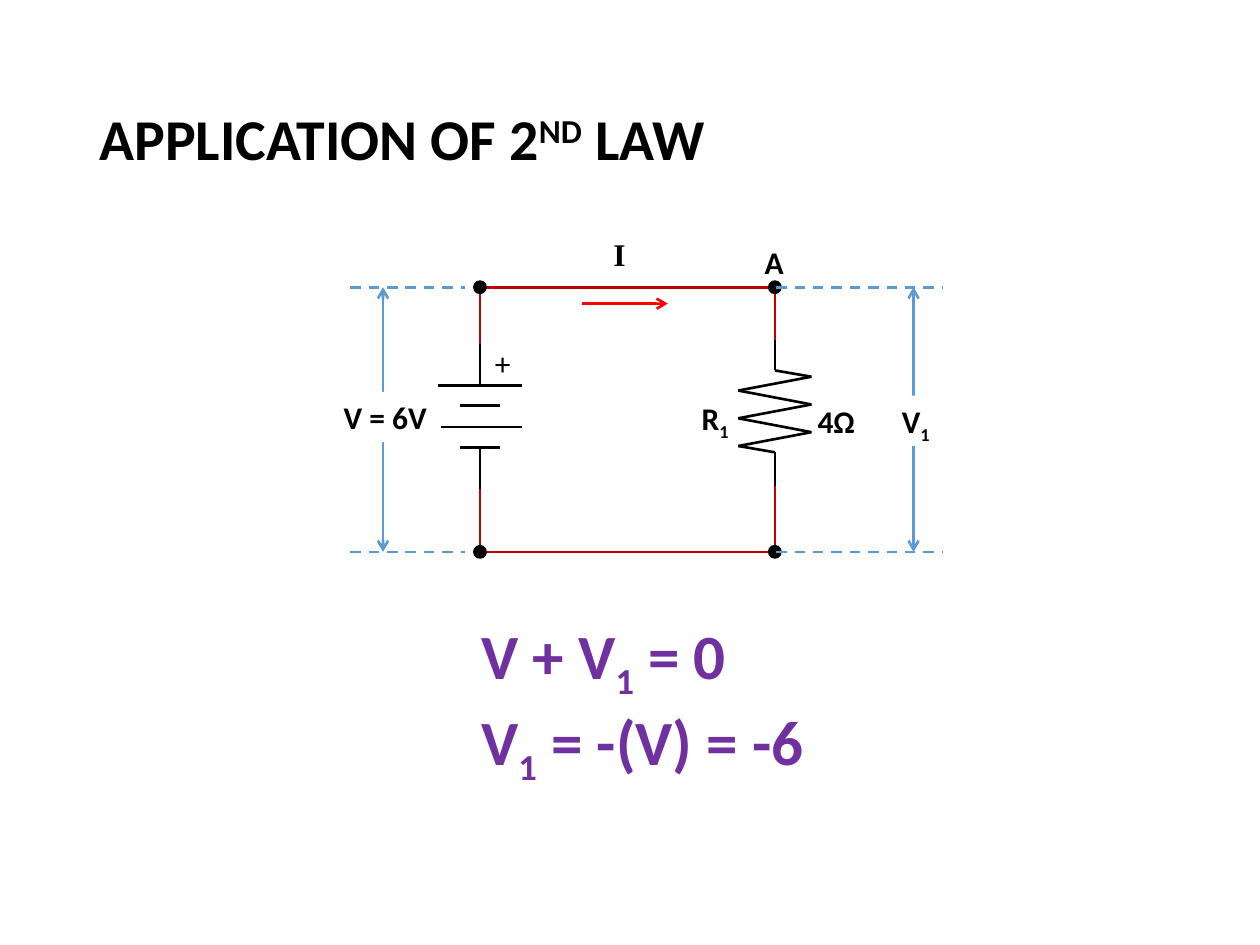
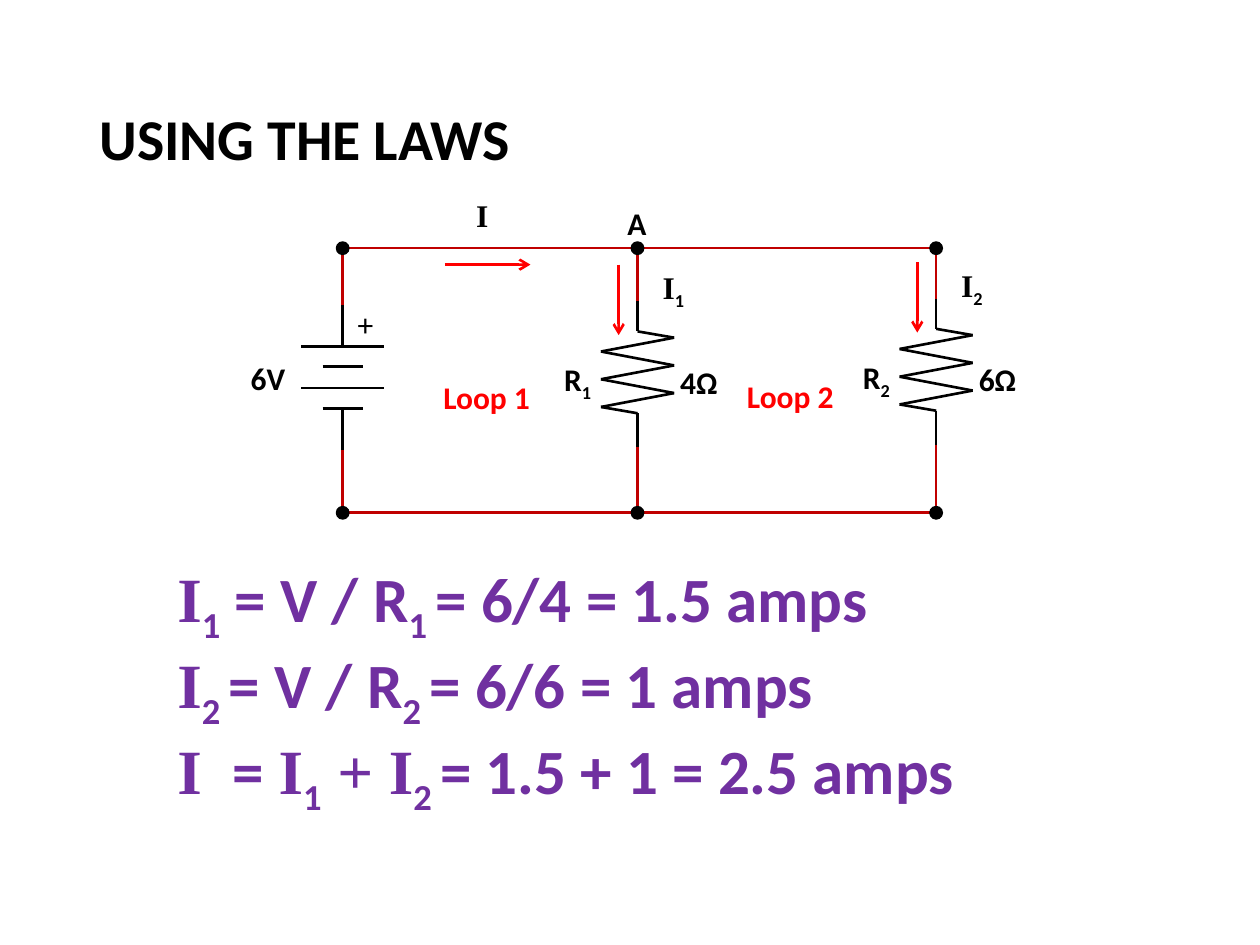
from itertools import pairwise
from lxml.etree import SubElement
from pptx import Presentation
from pptx.dml.color import RGBColor
from pptx.enum.dml import MSO_LINE
from pptx.enum.shapes import MSO_CONNECTOR, MSO_SHAPE
from pptx.enum.text import MSO_ANCHOR, MSO_AUTO_SIZE, PP_ALIGN
from pptx.oxml.ns import qn
from pptx.util import Inches, Pt


class Theme:
    black = RGBColor.from_string("000000")
    white = RGBColor.from_string("FFFFFF")
    wire = RGBColor.from_string("C00000")
    red = RGBColor.from_string("FF0000")
    blue = RGBColor.from_string("5B9BD5")
    purple = RGBColor.from_string("7030A0")
    sans = "Calibri"
    serif = "Times New Roman"
    title = Pt(33)
    formula = Pt(36)
    label = Pt(18)
    stroke = Pt(1.5)


def draw(slide, start, end, color, ends=(), dash=False):
    line = slide.shapes.add_connector(
        MSO_CONNECTOR.STRAIGHT, *map(Inches, (*start, *end)))
    line.line.color.rgb = color
    line.line.width = Theme.stroke
    if dash:
        line.line.dash_style = MSO_LINE.DASH
    props = line._element.spPr
    for tip in ends:
        SubElement(props.find(qn("a:ln")), qn(f"a:{tip}")).set("type", "arrow")
    SubElement(props, qn("a:effectLst"))


def write(slide, box, lines, size=Theme.label, color=Theme.black,
          bold=True, wrap=False, fill=None, shape=None):
    shape = shape or slide.shapes.add_textbox(0, 0, 0, 0)
    for name, value in zip(("left", "top", "width", "height"), box):
        setattr(shape, name, Inches(value))
    if fill is not None:
        shape.fill.solid()
        shape.fill.fore_color.rgb = fill
    frame = shape.text_frame
    frame.word_wrap = wrap
    frame.auto_size = MSO_AUTO_SIZE.SHAPE_TO_FIT_TEXT
    for i, text in enumerate(lines):
        para = frame.add_paragraph() if i else frame.paragraphs[0]
        para.alignment = PP_ALIGN.LEFT
        if "\t" in text:
            tabs = SubElement(para._p.get_or_add_pPr(), qn("a:tabLst"))
            stop = SubElement(tabs, qn("a:tab"))
            stop.set("pos", str(Inches(0.44)))
            stop.set("algn", "l")
        for part in text.split("|"):
            mark = part[0] if part[0] in "_^~" else ""
            run = para.add_run()
            run.text = part[len(mark):]
            look = {"name": Theme.serif if mark == "~" else Theme.sans,
                    "size": size, "bold": bold}
            for name, value in look.items():
                setattr(run.font, name, value)
            run.font.color.rgb = color
            if mark in ("_", "^"):
                shift = "-25000" if mark == "_" else "30000"
                run._r.get_or_add_rPr().set("baseline", shift)
    return shape


pages = [
    {"title": "APPLICATION OF 2|^ND| LAW",
     "origin": (3.81, 2.28),
     "box": (3.72, 4.84, 3.35, 1.31),
     "lines": ["V + V|_1| = 0", "V|_1| = -(V) = -6"],
     "loads": [(2.34, 0, "R|_1", "4Ω", "")],
     "spans": [(3.04, 2.78, 3.69, (2.63, 3.11, 0.87, 0.4), "V = 6V"),
               (7.25, 6.16, 7.48, (7.06, 3.14, 0.44, 0.4), "V|_1")],
     "notes": []},
    {"title": "USING THE LAWS",
     "origin": (2.72, 1.97),
     "box": (1.31, 4.39, 8.59, 2.73),
     "lines": ["~I|_1| = V / R|_1 |= 6/4 = 1.5 amps",
               "~I|_2 |= V / R|_2 |= 6/6 = 1 amps",
               "~I|\t= |~I|_1|~ + I|_2 |= 1.5 + 1 = 2.5 amps"],
     "loads": [(2.34, 0, "R|_1", "4Ω", "~I|_1"),
               (4.71, -0.02, "R|_2", "6Ω", "~I|_2")],
     "spans": [],
     "notes": [((1.89, 2.8, 0.48, 0.4), "6V", Theme.black),
               ((3.42, 2.95, 0.89, 0.4), "Loop 1", Theme.red),
               ((5.83, 2.94, 0.89, 0.4), "Loop 2", Theme.red)]},
]
drop = 2.1
plates = [(0.78, 0.33), (0.94, 0.16), (1.11, 0.33), (1.27, 0.16)]
zigzag = [(0, 0.42), (0, 0.66), (0.29, 0.71), (-0.29, 0.82), (0.29, 0.93),
          (-0.29, 1.04), (0.29, 1.15), (-0.29, 1.26), (0, 1.31), (0, 1.58)]

deck = Presentation()
deck.slide_width, deck.slide_height = Inches(10), Inches(7.5)

for page in pages:
    slide = deck.slides.add_slide(deck.slide_layouts[5])
    head = write(slide, (0.69, 0.4, 8.62, 1.45), [page["title"]],
                 Theme.title, wrap=True, shape=slide.shapes.title)
    head.text_frame.auto_size = MSO_AUTO_SIZE.NONE
    head.text_frame.vertical_anchor = MSO_ANCHOR.MIDDLE
    head.text_frame.paragraphs[0].line_spacing = 0.9
    write(slide, page["box"], page["lines"], Theme.formula, Theme.purple,
          wrap=True)

    x, y = page["origin"]
    base = y + drop
    right = x + page["loads"][-1][0]
    for level in (y, base):
        draw(slide, (x, level), (right, level), Theme.wire)
    for top, low, color in [(0, 0.45, Theme.wire), (0.45, 0.78, Theme.black),
                            (1.27, 1.6, Theme.black), (1.6, drop, Theme.wire)]:
        draw(slide, (x, y + top), (x, y + low), color)
    for dy, half in plates:
        draw(slide, (x - half, y + dy), (x + half, y + dy), Theme.black)
    write(slide, (x + 0.02, y + 0.4, 0.33, 0.4), ["+"], bold=False)
    write(slide, (x + 0.96, y - 0.46, 0.3, 0.4), ["~I"])
    draw(slide, (x + 0.81, y + 0.13), (x + 1.49, y + 0.13), Theme.red,
         ["tailEnd"])

    for dx, dy, name, ohms, flow in page["loads"]:
        mid, top = x + dx, y + dy
        draw(slide, (mid, y), (mid, top + 0.42), Theme.wire)
        draw(slide, (mid, top + 1.56), (mid, base), Theme.wire)
        for (ax, ay), (bx, by) in pairwise(zigzag):
            draw(slide, (mid + ax, top + ay), (mid + bx, top + by),
                 Theme.black)
        write(slide, (mid - 0.68, top + 0.84, 0.43, 0.4), [name])
        write(slide, (mid + 0.24, top + 0.86, 0.5, 0.4), [ohms])
        if flow:
            write(slide, (mid + 0.1, top + 0.11, 0.38, 0.4), [flow], wrap=True)
            draw(slide, (mid - 0.15, top + 0.13), (mid - 0.15, top + 0.69),
                 Theme.red, ["tailEnd"])
    write(slide, (x + 2.16, y - 0.4, 0.35, 0.4), ["A"])

    for node in [x] + [x + load[0] for load in page["loads"]]:
        for level in (y, base):
            dot = slide.shapes.add_shape(
                MSO_SHAPE.OVAL, Inches(node - 0.05), Inches(level - 0.05),
                Inches(0.1), Inches(0.1))
            dot.shadow.inherit = False
            dot.fill.solid()
            dot.fill.fore_color.rgb = Theme.black
            dot.line.color.rgb = Theme.black

    for at, left, end, box, text in page["spans"]:
        draw(slide, (at, base), (at, y), Theme.blue, ["headEnd", "tailEnd"])
        for level in (y, base):
            draw(slide, (left, level), (end, level), Theme.blue, dash=True)
        write(slide, box, [text], fill=Theme.white)
    for box, text, color in page["notes"]:
        write(slide, box, [text], color=color)

deck.save("out.pptx")
